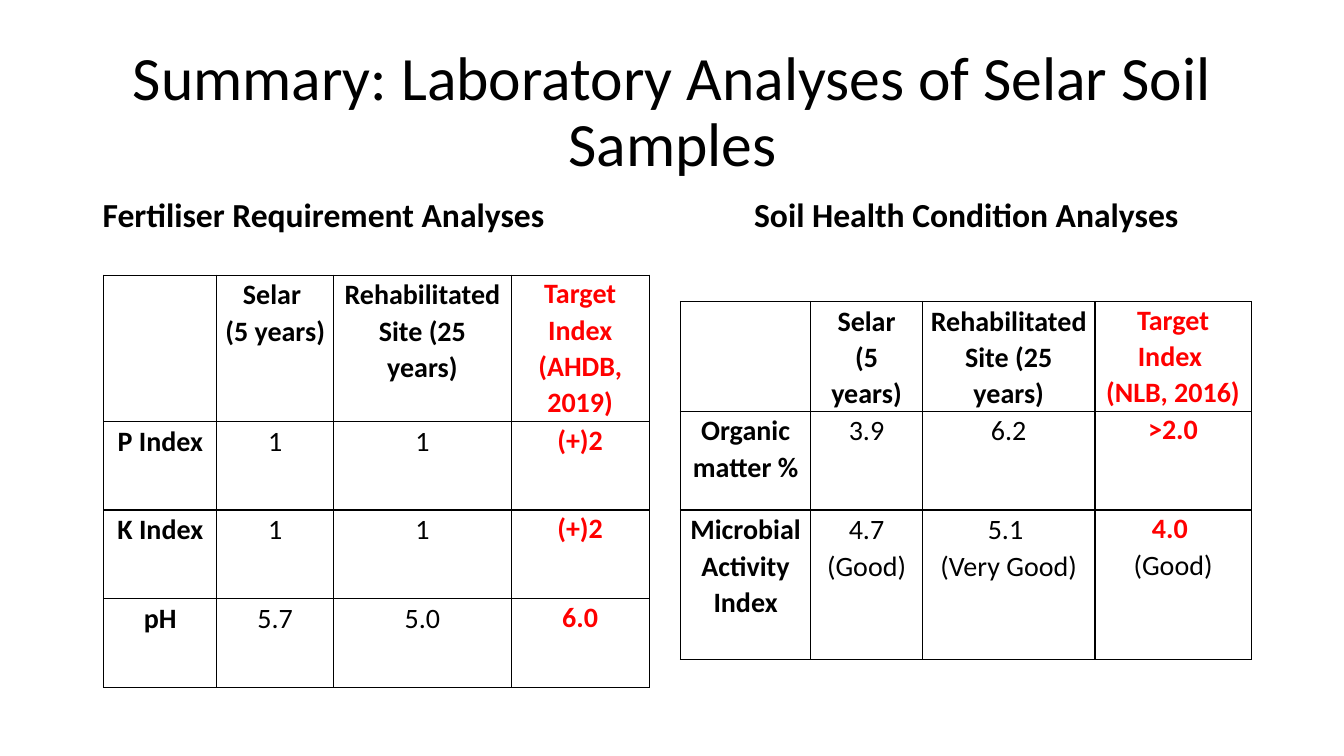
from lxml import etree
from pptx import Presentation
from pptx import util as u
from pptx.dml.color import RGBColor
from pptx.enum import text as t
from pptx.oxml.ns import qn

BLACK, RED = "000000", "FF0000"

FERTILISER_ROWS = [
    ["", "Selar \n(5 years)", "Rehabilitated Site (25 years)", "Target\nIndex (AHDB, 2019)"],
    ["P Index", "1", "1", "(+)2"],
    ["K Index", "1", "1", "(+)2"],
    ["pH", "5.7", "5.0", "6.0"],
]
HEALTH_ROWS = [
    ["", "Selar\n(5 years)", "Rehabilitated Site (25 years)", "Target\nIndex \n(NLB, 2016)"],
    ["Organic matter %", "3.9", "6.2", ">2.0"],
    ["Microbial Activity Index", "4.7 (Good)", "5.1 \n(Very Good)", "4.0 \n(Good)"],
]


def rgb(value):
    """Return the colour for a hex string."""
    return RGBColor.from_string(value)


def write(para, words, size=20, color=BLACK, bold=False, align=t.PP_ALIGN.CENTER, spacing=1.06):
    """Put formatted words in a paragraph."""
    para.alignment = align
    para.line_spacing = spacing
    span = para.add_run()
    span.text = words
    span.font.name = "Calibri"
    span.font.size = u.Pt(size)
    span.font.bold = bold
    span.font.color.rgb = rgb(color)


def add_text(page, words, place, anchor, top_inset=0.05, **style):
    """Add a wrapping text box with one paragraph."""
    box = page.shapes.add_textbox(*map(u.Inches, place))
    frame = box.text_frame
    frame.word_wrap = True
    frame.vertical_anchor = anchor
    frame.margin_top = u.Inches(top_inset)
    write(frame.paragraphs[0], words, spacing=0.9, **style)


def add_borders(cell):
    """Draw a thin black line on all four sides of a cell."""
    props = cell._tc.get_or_add_tcPr()
    for index, side in enumerate(("lnL", "lnR", "lnT", "lnB")):
        line = etree.Element(qn("a:" + side), w=str(u.Pt(1)))
        fill = etree.SubElement(line, qn("a:solidFill"))
        etree.SubElement(fill, qn("a:srgbClr"), val=BLACK)
        props.insert(index, line)


def fill_cell(cell, words, is_label, is_target):
    """Write one table cell, with labels bold and target values red."""
    cell.fill.background()
    add_borders(cell)
    side, top = (0, 0) if is_target else (0.07, 0.01)
    cell.margin_left = cell.margin_right = u.Inches(side)
    cell.margin_top, cell.margin_bottom = u.Inches(top), 0
    frame = cell.text_frame
    for index, line in enumerate(words.split("\n") if words else []):
        para = frame.add_paragraph() if index else frame.paragraphs[0]
        is_red = is_target and (is_label or index == 0)
        write(para, line, bold=is_label or is_red, color=RED if is_red else BLACK)


def add_table(page, rows, left, top, widths, heights):
    """Add a bordered table whose last column holds the targets."""
    place = map(u.Inches, (left, top, sum(widths), sum(heights)))
    table = page.shapes.add_table(len(rows), len(widths), *place).table
    table.first_row = table.horz_banding = False
    for column, width in zip(table.columns, widths):
        column.width = u.Inches(width)
    for row, height in zip(table.rows, heights):
        row.height = u.Inches(height)
    for r, row in enumerate(rows):
        for c, words in enumerate(row):
            fill_cell(table.cell(r, c), words, r == 0 or c == 0, c == len(row) - 1)


def main():
    """Build the soil analysis summary slide."""
    deck = Presentation()
    deck.slide_width, deck.slide_height = u.Inches(13.33), u.Inches(7.5)
    page = deck.slides.add_slide(deck.slide_layouts[6])
    add_text(page, "Summary: Laboratory Analyses of Selar Soil Samples",
             (0.92, 0.4, 11.5, 1.45), t.MSO_ANCHOR.MIDDLE, size=44)
    headings = [
        ("Fertiliser Requirement Analyses", 0.92, 5.64, t.PP_ALIGN.LEFT),
        ("Soil Health Condition Analyses", 6.75, 5.67, t.PP_ALIGN.CENTER),
    ]
    for words, left, width, align in headings:
        add_text(page, words, (left, 1.84, width, 0.9), t.MSO_ANCHOR.TOP,
                 top_inset=0.13, size=24, bold=True, align=align)
    add_table(page, FERTILISER_ROWS, 1.03, 2.73,
              [1.12, 1.16, 1.76, 1.37], [1.45, 0.88, 0.88, 0.88])
    add_table(page, HEALTH_ROWS, 6.75, 2.99,
              [1.29, 1.11, 1.71, 1.55], [1.09, 0.98, 1.48])
    deck.save("out.pptx")


main()
